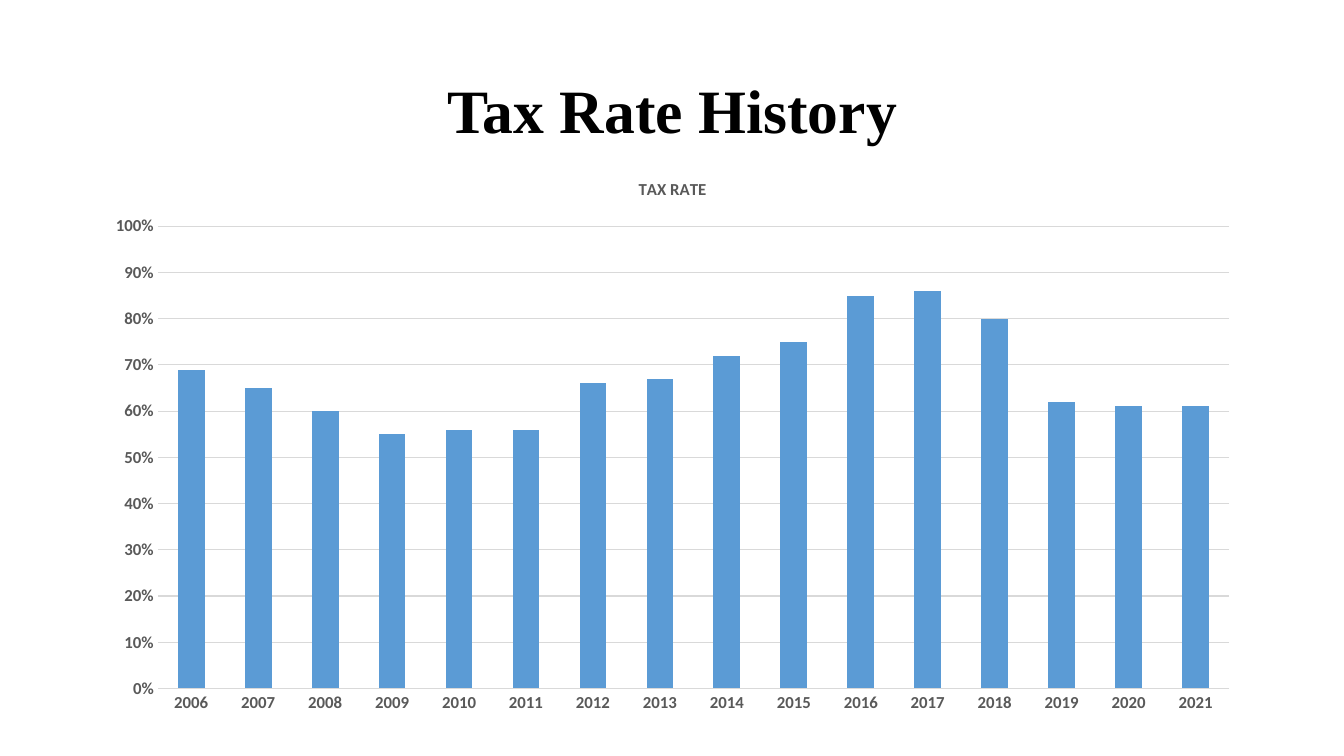
from pptx import Presentation
from pptx.chart.data import CategoryChartData as ChartData
from pptx.dml.color import RGBColor
from pptx.enum.chart import XL_CHART_TYPE as Kind, XL_TICK_MARK as Tick
from pptx.enum.text import MSO_ANCHOR as Anchor, PP_ALIGN as Align
from pptx.util import Inches, Pt


def style(font, name, size, color):
    font.name, font.size, font.bold = name, Pt(size), True
    font.color.rgb = RGBColor.from_string(color)


deck = Presentation()
deck.slide_width, deck.slide_height = Inches(13.33), Inches(7.5)
slide = deck.slides.add_slide(deck.slide_layouts[5])
left, width = Inches(0.92), Inches(11.5)

# Title
title = slide.shapes.title
title.left, title.top = left, Inches(0.4)
title.width, title.height = width, Inches(1.45)
frame = title.text_frame
frame.text = "Tax Rate History"
frame.vertical_anchor = Anchor.MIDDLE
head = frame.paragraphs[0]
head.alignment, head.line_spacing = Align.CENTER, 0.9
style(head.font, "Times New Roman", 44, "000000")

# Tax rates by year
rates = [0.69, 0.65, 0.6, 0.55, 0.56, 0.56, 0.66, 0.67,
         0.72, 0.75, 0.85, 0.86, 0.8, 0.62, 0.61, 0.61]
data = ChartData(number_format="0%")
data.categories = [str(2006 + i) for i in range(len(rates))]
data.add_series("TAX RATE", rates)
chart = slide.shapes.add_chart(
    Kind.COLUMN_CLUSTERED, left, Inches(1.57), width, Inches(5.61), data).chart
chart.has_legend = False
chart.font.name, chart.font.size = "Calibri", Pt(10)

# Chart heading
chart.has_title = True
label = chart.chart_title.text_frame
label.text = "TAX RATE"
style(label.paragraphs[0].font, "Calibri", 12, "595959")
chart.chart_title.include_in_layout = False

# Columns
plot = chart.plots[0]
plot.gap_width, plot.vary_by_categories = 150, False
fill = plot.series[0].format.fill
fill.solid()
fill.fore_color.rgb = RGBColor.from_string("5B9BD5")

# Axes and grid
years, scale = chart.category_axis, chart.value_axis
for axis in (years, scale):
    axis.major_tick_mark = axis.minor_tick_mark = Tick.NONE
    axis.format.line.fill.background()
    style(axis.tick_labels.font, "Calibri", 12, "595959")
scale.minimum_scale, scale.maximum_scale, scale.major_unit = 0, 1, 0.1
scale.tick_labels.number_format = "0%"
scale.tick_labels.number_format_is_linked = False
scale.has_major_gridlines = True
grid = scale.major_gridlines.format.line
grid.width = Pt(0.75)
grid.color.rgb = RGBColor.from_string("D9D9D9")

deck.save("out.pptx")
